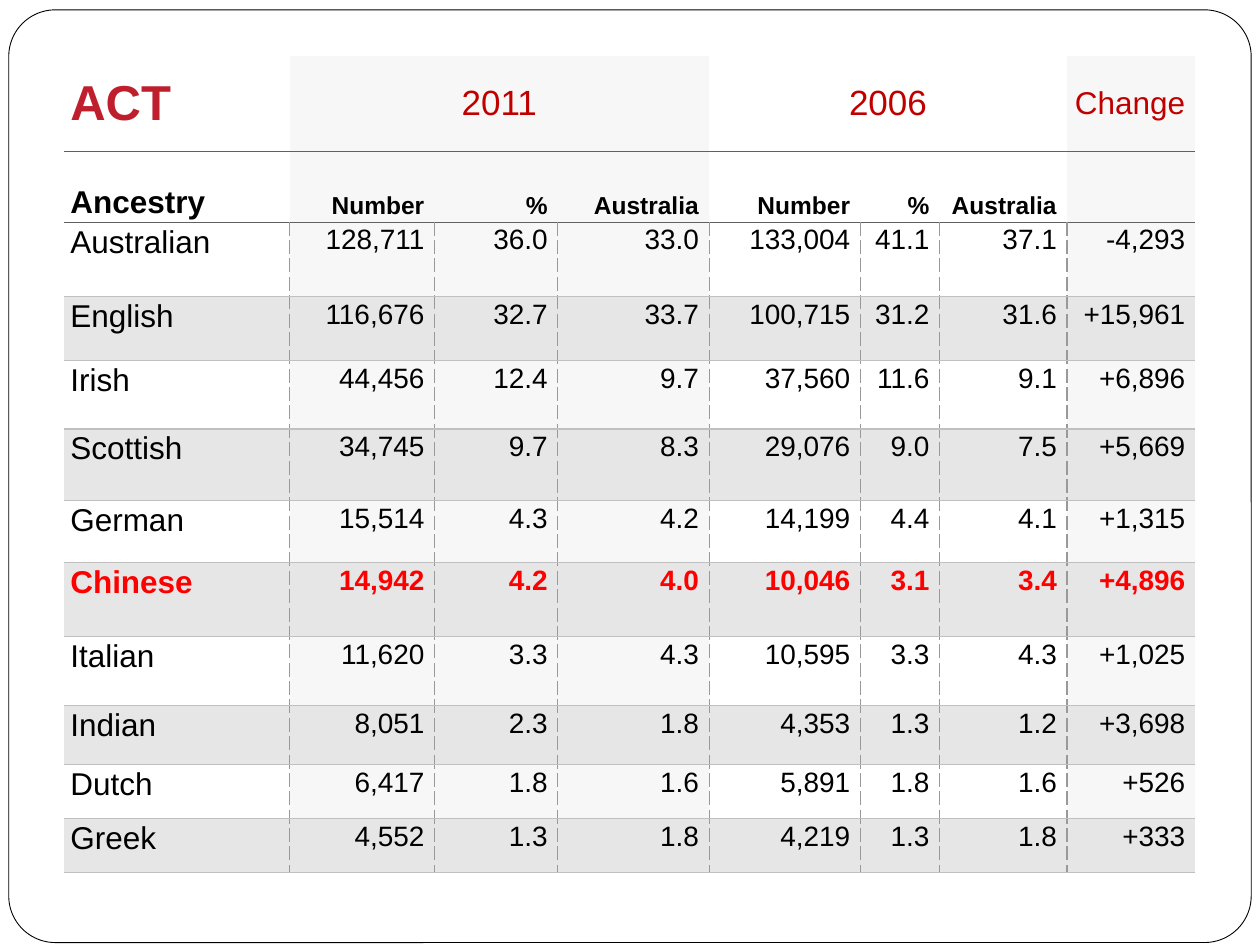
from lxml.etree import SubElement
from pptx import Presentation
from pptx.dml.color import RGBColor
from pptx.enum.shapes import MSO_SHAPE
from pptx.enum.text import MSO_ANCHOR as Anchor, PP_ALIGN as Align
from pptx.oxml.ns import qn
from pptx.util import Pt

COLORS = {
    "white": "FFFFFF", "black": "000000", "title": "BF1E2D", "heading": "C00000",
    "highlight": "FF0000", "tint": "F7F7F7", "band": "E6E6E6",
    "header_rule": "5F6062", "row_rule": "C0C0C0", "column_rule": "999999",
}
COLUMN_WIDTHS = [128.9, 82.8, 70.5, 86.4, 86.4, 45.3, 72.8, 73.4]
ROW_HEIGHTS = [54.7, 40.4, 42.6, 36.7, 38.9, 41, 35.3, 42.4, 39.5, 33.7, 30.9, 30.9]
TINTED_COLUMNS = (1, 2, 3, 7)
LAST_COLUMN = 7
HIGHLIGHTED = "Chinese"
ROWS = [
    ["ACT", "2011", "", "", "2006", "", "", "Change"],
    ["Ancestry", "Number", "%", "Australia", "Number", "%", "Australia", ""],
    ["Australian", "128,711", "36.0", "33.0", "133,004", "41.1", "37.1", "-4,293"],
    ["English", "116,676", "32.7", "33.7", "100,715", "31.2", "31.6", "+15,961"],
    ["Irish", "44,456", "12.4", "9.7", "37,560", "11.6", "9.1", "+6,896"],
    ["Scottish", "34,745", "9.7", "8.3", "29,076", "9.0", "7.5", "+5,669"],
    ["German", "15,514", "4.3", "4.2", "14,199", "4.4", "4.1", "+1,315"],
    ["Chinese", "14,942", "4.2", "4.0", "10,046", "3.1", "3.4", "+4,896"],
    ["Italian", "11,620", "3.3", "4.3", "10,595", "3.3", "4.3", "+1,025"],
    ["Indian", "8,051", "2.3", "1.8", "4,353", "1.3", "1.2", "+3,698"],
    ["Dutch", "6,417", "1.8", "1.6", "5,891", "1.8", "1.6", "+526"],
    ["Greek", "4,552", "1.3", "1.8", "4,219", "1.3", "1.8", "+333"],
]


def rgb(name):
    """Return the named colour."""
    return RGBColor.from_string(COLORS[name])


def set_attributes(target, values):
    """Set each attribute of the target from a dict."""
    for name, value in values.items():
        setattr(target, name, value)


def add_frame(slide, left, top, width, height):
    """Draw the rounded frame around the slide."""
    frame = slide.shapes.add_shape(
        MSO_SHAPE.ROUNDED_RECTANGLE, Pt(left), Pt(top), Pt(width), Pt(height))
    frame.adjustments[0] = 0.05
    frame.shadow.inherit = False
    frame.fill.solid()
    frame.fill.fore_color.rgb = rgb("white")
    frame.line.color.rgb = rgb("black")
    frame.line.width = Pt(0.5)


def set_borders(cell, row, column):
    """Draw the rules on the four sides of a cell."""
    in_body = row >= 2
    rules = {
        "L": "column_rule" if in_body and column > 0 else None,
        "R": "column_rule" if in_body and column < LAST_COLUMN else None,
        "T": None if row == 0 else "header_rule" if row <= 2 else "row_rule",
        "B": "row_rule" if in_body else "header_rule",
    }
    properties = cell._tc.get_or_add_tcPr()
    for index, (side, color) in enumerate(rules.items()):
        line = SubElement(properties, qn(f"a:ln{side}"), w=str(Pt(0.75)))
        properties.insert(index, line)
        if color is None:
            SubElement(line, qn("a:noFill"))
            continue
        fill = SubElement(line, qn("a:solidFill"))
        SubElement(fill, qn("a:srgbClr"), val=COLORS[color])
        SubElement(line, qn("a:prstDash"), val="dash" if side in "LR" else "solid")


def text_format(row, column):
    """Return the size, weight and colour for a cell of the table."""
    is_label = column == 0
    if row == 0:
        size = 28 if is_label else 18 if column == LAST_COLUMN else 20
        return size, is_label, "title" if is_label else "heading"
    if row == 1:
        return 18 if is_label else 14, True, "black"
    highlighted = ROWS[row][0] == HIGHLIGHTED
    return 18 if is_label else 16, highlighted, "highlight" if highlighted else "black"


def fill_cell(cell, row, column):
    """Give a cell its fill, rules, margins and text."""
    banded = row >= 2 and row % 2 == 1
    cell.fill.solid()
    cell.fill.fore_color.rgb = rgb(
        "band" if banded else "tint" if column in TINTED_COLUMNS else "white")
    set_borders(cell, row, column)
    is_label = column == 0
    is_group = row == 0 and 0 < column < LAST_COLUMN
    set_attributes(cell, {
        "margin_left": Pt(3.6 if is_label else 2.2),
        "margin_right": Pt(2.2 if is_label or is_group else 5.8),
        "margin_top": Pt(1.4),
        "margin_bottom": Pt(1.4),
        "vertical_anchor": {0: Anchor.MIDDLE, 1: Anchor.BOTTOM}.get(row, Anchor.TOP),
    })
    if not ROWS[row][column]:
        return
    paragraph = cell.text_frame.paragraphs[0]
    paragraph.alignment = (
        Align.LEFT if is_label else Align.CENTER if is_group else Align.RIGHT)
    run = paragraph.add_run()
    run.text = ROWS[row][column]
    size, bold, color = text_format(row, column)
    set_attributes(run.font, {"name": "Arial", "size": Pt(size), "bold": bold})
    run.font.color.rgb = rgb(color)


def add_ancestry_table(slide, left, top):
    """Build the table of ancestries in both census years."""
    table = slide.shapes.add_table(
        len(ROWS), len(COLUMN_WIDTHS), Pt(left), Pt(top),
        Pt(sum(COLUMN_WIDTHS)), Pt(sum(ROW_HEIGHTS))).table
    for column, width in zip(table.columns, COLUMN_WIDTHS):
        column.width = Pt(width)
    for row, height in zip(table.rows, ROW_HEIGHTS):
        row.height = Pt(height)
    for first in (1, 4):
        table.cell(0, first).merge(table.cell(0, first + 2))
    for row in range(len(ROWS)):
        for column in range(len(COLUMN_WIDTHS)):
            fill_cell(table.cell(row, column), row, column)


def main():
    """Build and save the slide."""
    presentation = Presentation()
    set_attributes(presentation, {"slide_width": Pt(720), "slide_height": Pt(540)})
    slide = presentation.slides.add_slide(presentation.slide_layouts[6])
    add_frame(slide, 5, 5.6, 710, 533)
    add_ancestry_table(slide, 36.6, 31.9)
    presentation.save("out.pptx")


if __name__ == "__main__":
    main()
